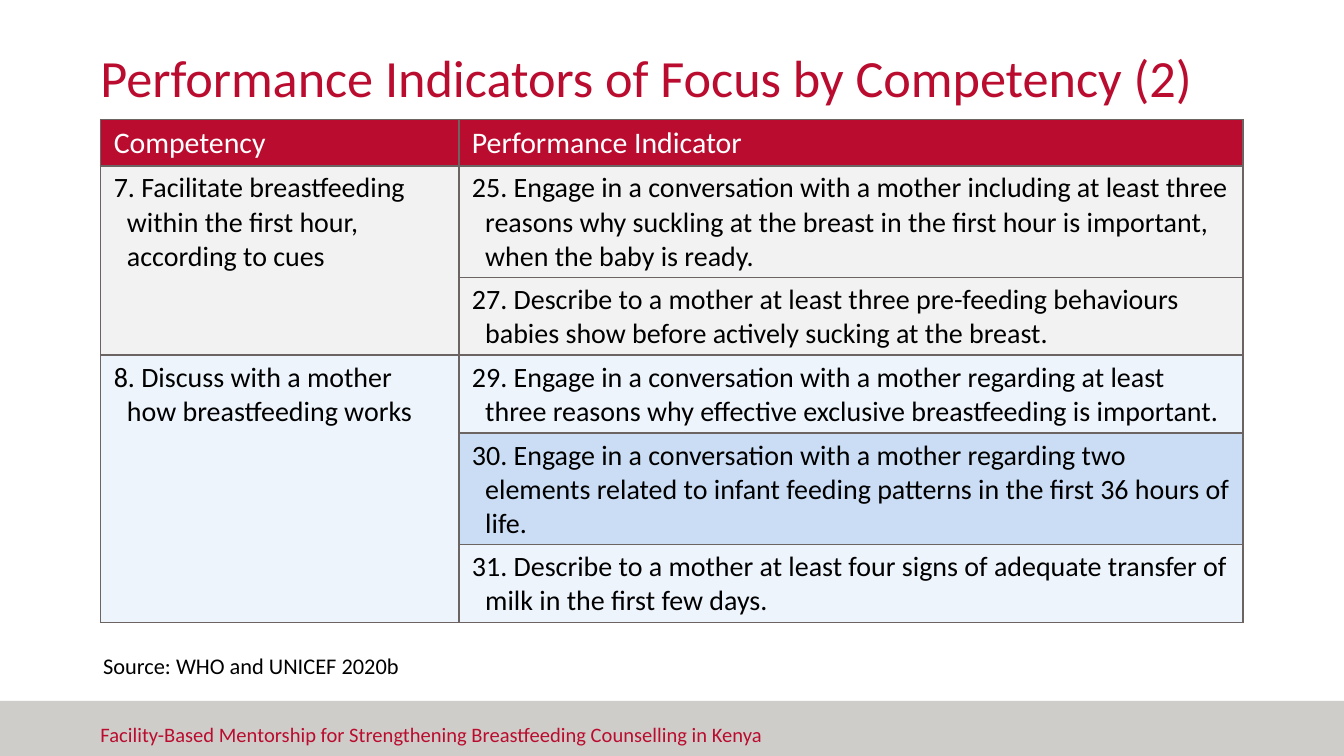
from lxml import etree
from pptx import Presentation
from pptx.dml.color import RGBColor
from pptx.enum.shapes import MSO_SHAPE
from pptx.enum.text import MSO_ANCHOR
from pptx.oxml.ns import qn
from pptx.util import Cm, Pt

RECTANGLE = MSO_SHAPE.RECTANGLE
TOP, BOTTOM = MSO_ANCHOR.TOP, MSO_ANCHOR.BOTTOM

FONT = "Calibri"
COLORS = {
    "red": "BA0C2F",
    "footer": "CFCDC9",
    "border": "6C6463",
    "gray": "F2F2F2",
    "pale_blue": "EDF4FB",
    "blue": "CADDF4",
    "white": "FFFFFF",
    "black": "000000",
}
LEFT, CONTENT_WIDTH = 1.9, 21.59
HANGING = Cm(0.25)

HEADINGS = ("Competency", "Performance Indicator")
# Each competency: text, fill, and its indicators with their fills
COMPETENCIES = [
    ("7. Facilitate breastfeeding within the first hour, according to cues", "gray", [
        ("25. Engage in a conversation with a mother including at least three reasons "
         "why suckling at the breast in the first hour is important, when the baby is ready.",
         "gray"),
        ("27. Describe to a mother at least three pre-feeding behaviours babies show "
         "before actively sucking at the breast.", "gray"),
    ]),
    ("8. Discuss with a mother how breastfeeding works", "pale_blue", [
        ("29. Engage in a conversation with a mother regarding at least three reasons "
         "why effective exclusive breastfeeding is important.", "pale_blue"),
        ("30. Engage in a conversation with a mother regarding two elements related to "
         "infant feeding patterns in the first 36 hours of life.", "blue"),
        ("31. Describe to a mother at least four signs of adequate transfer of milk "
         "in the first few days.", "pale_blue"),
    ]),
]


def rgb(name):
    return RGBColor.from_string(COLORS[name])


def style_paragraph(paragraph, size, color):
    font = paragraph.font
    font.name, font.size, font.bold = FONT, Pt(size), False
    font.color.rgb = rgb(color)


def add_text(slide, box, text, size, color, margins, anchor=TOP):
    shape = slide.shapes.add_textbox(*map(Cm, box))
    frame = shape.text_frame
    frame.word_wrap = True
    frame.vertical_anchor = anchor
    (frame.margin_left, frame.margin_top,
     frame.margin_right, frame.margin_bottom) = map(Cm, margins)
    frame.text = text
    style_paragraph(frame.paragraphs[0], size, color)


def add_footer(slide, box):
    left, top, width, height = box
    band = slide.shapes.add_shape(RECTANGLE, *map(Cm, box))
    band.shadow.inherit = False
    band.fill.solid()
    band.fill.fore_color.rgb = rgb("footer")
    band.line.fill.background()
    add_text(slide, (left + LEFT, top + 0.26, 13.36, 1.19),
             "Facility-Based Mentorship for Strengthening Breastfeeding Counselling in Kenya",
             11, "red", (0, 0.13, 0.25, 0.13))


def set_borders(cell):
    properties = cell._tc.get_or_add_tcPr()
    for side in ("lnL", "lnR", "lnT", "lnB"):
        line = etree.SubElement(properties, qn(f"a:{side}"), w=str(Pt(1)))
        fill = etree.SubElement(line, qn("a:solidFill"))
        etree.SubElement(fill, qn("a:srgbClr"), val=COLORS["border"])


def style_cell(cell, fill):
    set_borders(cell)
    cell.fill.solid()
    cell.fill.fore_color.rgb = rgb(fill)
    cell.margin_left = cell.margin_right = Cm(0.25)
    cell.margin_top = cell.margin_bottom = Cm(0.1)


def write_cell(cell, text, size, color, hanging=0):
    cell.text = text
    paragraph = cell.text_frame.paragraphs[0]
    if hanging:
        properties = paragraph._p.get_or_add_pPr()
        properties.set("marL", str(hanging))
        properties.set("indent", str(-hanging))
    style_paragraph(paragraph, size, color)


def add_competency_table(slide, box):
    row_count = 1 + sum(len(indicators) for _, _, indicators in COMPETENCIES)
    frame = slide.shapes.add_table(row_count, 2, *map(Cm, box))
    table = frame.table
    table.columns[0].width = Cm(6.77)
    table.columns[1].width = Cm(box[2] - 6.77)
    # Rows start at a minimum height and grow with their text
    for row in table.rows:
        row.height = Cm(0.76)
    frame.height = Cm(box[3])

    # Heading row
    for column, heading in enumerate(HEADINGS):
        cell = table.cell(0, column)
        style_cell(cell, "red")
        write_cell(cell, heading, 16, "white")

    # One merged competency cell beside its indicators
    first = 1
    for competency, competency_fill, indicators in COMPETENCIES:
        for row, (indicator, fill) in enumerate(indicators, first):
            style_cell(table.cell(row, 0), competency_fill)
            style_cell(table.cell(row, 1), fill)
            write_cell(table.cell(row, 1), indicator, 15, "black", HANGING)
        last = first + len(indicators) - 1
        table.cell(first, 0).merge(table.cell(last, 0))
        write_cell(table.cell(first, 0), competency, 15, "black", HANGING)
        first = last + 1


def main():
    presentation = Presentation()
    presentation.slide_width, presentation.slide_height = Cm(25.4), Cm(14.29)
    slide = presentation.slides.add_slide(presentation.slide_layouts[6])

    add_footer(slide, (0, 13.25, 25.4, 1.04))
    add_text(slide, (LEFT, 0.15, CONTENT_WIDTH, 1.9),
             "Performance Indicators of Focus by Competency (2)",
             28, "red", (0, 0, 0, 0), BOTTOM)
    add_competency_table(slide, (LEFT, 2.26, CONTENT_WIDTH, 9.45))
    add_text(slide, (1.7, 12.2, 17.63, 0.76), "Source: WHO and UNICEF 2020b",
             12, "black", (0.25, 0.13, 0.25, 0.13))

    presentation.save("out.pptx")


if __name__ == "__main__":
    main()
